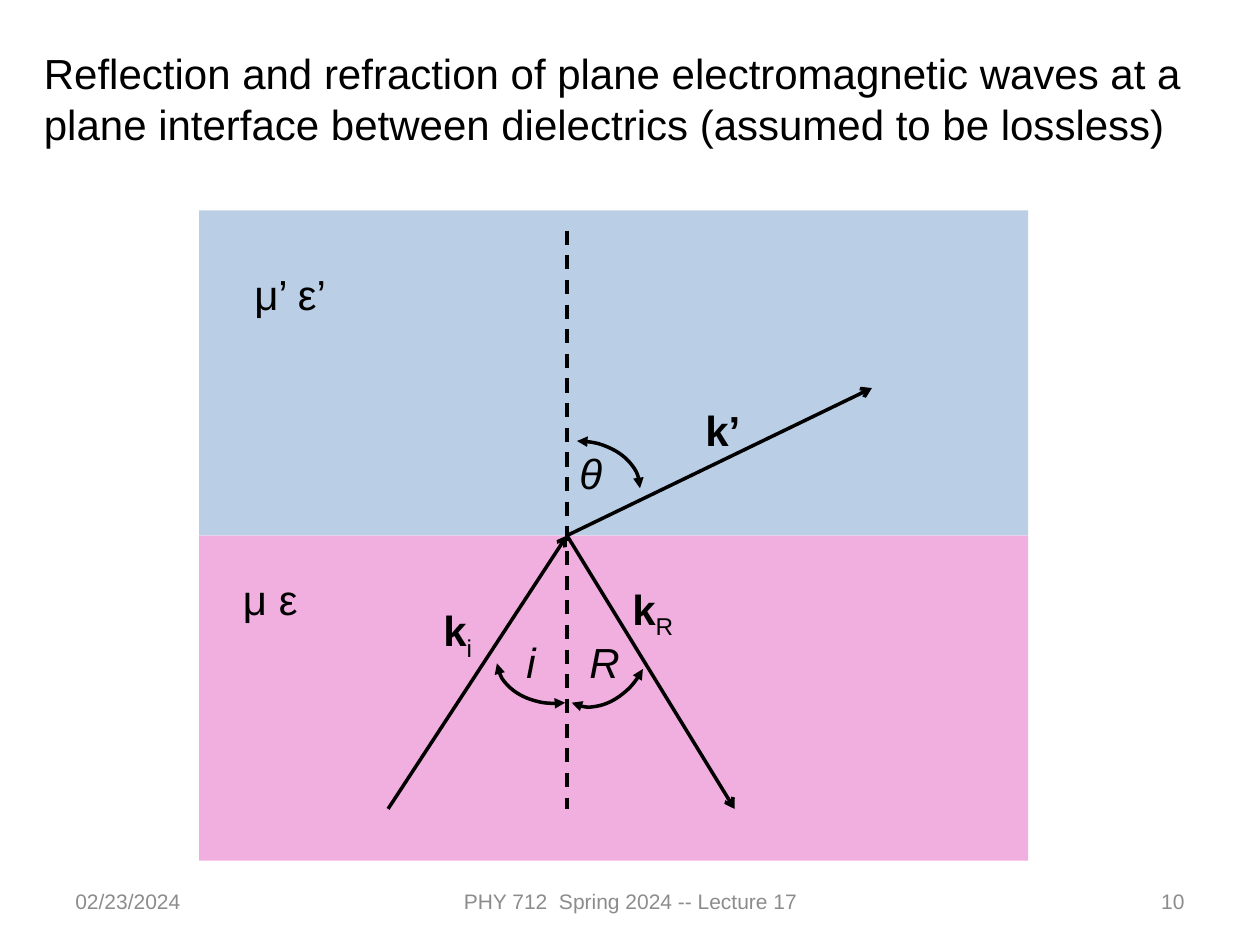
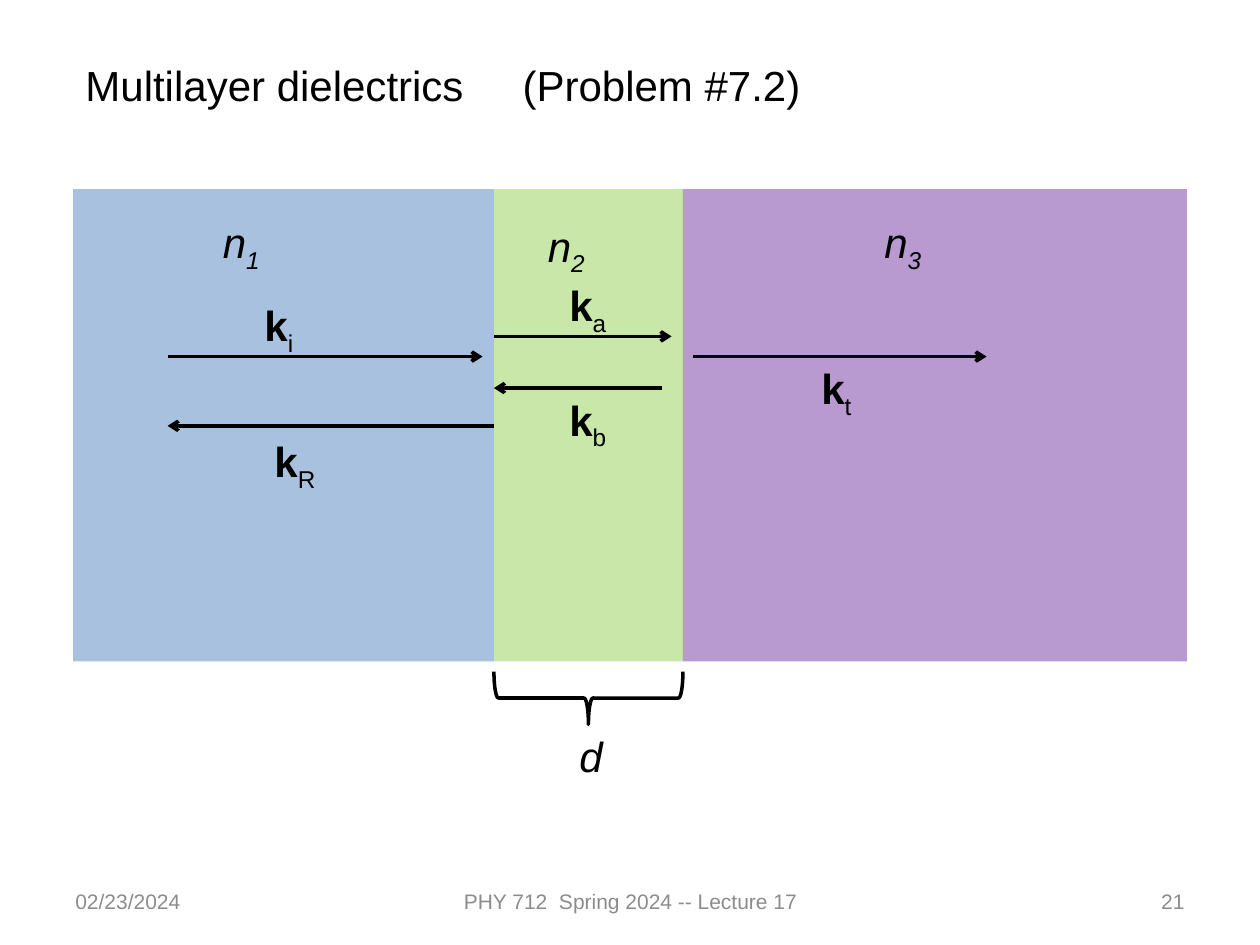
import lxml.etree
import pptx
import pptx.dml.color
import pptx.enum.dml
import pptx.enum.shapes
import pptx.enum.text
import pptx.oxml.ns
import pptx.util

Inches = pptx.util.Inches
RGBColor = pptx.dml.color.RGBColor
MSO_SHAPE = pptx.enum.shapes.MSO_SHAPE
PP_ALIGN = pptx.enum.text.PP_ALIGN
qn = pptx.oxml.ns.qn

BLACK = RGBColor(0x00, 0x00, 0x00)
GREY = RGBColor(0x8C, 0x8C, 0x8C)
BLUE = RGBColor(0x4F, 0x81, 0xBD)
PINK = RGBColor(0xDA, 0x32, 0xAA)
GREEN = RGBColor(0x92, 0xD0, 0x50)
PURPLE = RGBColor(0x70, 0x30, 0xA0)


def add_xml(parent, tag, **attrs):
    return lxml.etree.SubElement(parent, qn(tag), attrs)


def write(tf, text, sub="", size=24, color=BLACK, bold=False, italic=False,
          align=PP_ALIGN.LEFT, tab=None):
    p = tf.paragraphs[0]
    p.alignment = align
    if tab:
        tabs = add_xml(p._p.get_or_add_pPr(), "a:tabLst")
        add_xml(tabs, "a:tab", pos=str(Inches(tab)), algn="l")
    for part, lowered in ((text, False), (sub, True)):
        if not part:
            continue
        r = p.add_run()
        r.text = part
        r.font.name = "Arial"
        r.font.size = pptx.util.Pt(size)
        r.font.color.rgb = color
        r.font.bold = bold and not lowered
        r.font.italic = italic
        if lowered:
            r._r.get_or_add_rPr().set("baseline", "-25000")


class Deck:
    def __init__(self):
        self.prs = pptx.Presentation()
        self.prs.slide_width = Inches(10)
        self.prs.slide_height = Inches(7.5)
        self.s = None

    def slide(self, number):
        self.s = self.prs.slides.add_slide(self.prs.slide_layouts[6])
        for text, x, w, align in (
            ("02/23/2024", 0.5, 2.33, PP_ALIGN.LEFT),
            ("PHY 712  Spring 2024 -- Lecture 17", 3.42, 3.17, PP_ALIGN.CENTER),
            (str(number), 7.17, 2.33, PP_ALIGN.RIGHT),
        ):
            tf = self.text(text, x, 6.95, w, 0.4, size=12, color=GREY, align=align)
            tf.vertical_anchor = pptx.enum.text.MSO_ANCHOR.MIDDLE

    def text(self, text, x, y, w, h=0.5, **fmt):
        sp = self.s.shapes.add_textbox(Inches(x), Inches(y), Inches(w), Inches(h))
        tf = sp.text_frame
        tf.word_wrap = True
        write(tf, text, **fmt)
        return tf

    def vector(self, sub, x, y, w, text="k"):
        self.text(text, x, y, w, sub=sub, bold=True)

    def stroke(self, line):
        line.color.rgb = BLACK
        line.width = pptx.util.Pt(2)

    def shape(self, kind, x, y, w, h, rotation=0):
        sp = self.s.shapes.add_shape(kind, Inches(x), Inches(y), Inches(w), Inches(h))
        sp.shadow.inherit = False
        sp.rotation = rotation
        return sp

    def medium(self, color, alpha, x, y, w, h):
        sp = self.shape(MSO_SHAPE.RECTANGLE, x, y, w, h)
        sp.fill.solid()
        sp.fill.fore_color.rgb = color
        clr = sp._element.spPr.find(qn("a:solidFill")).find(qn("a:srgbClr"))
        add_xml(clr, "a:alpha", val=str(alpha * 1000))
        sp.line.fill.background()

    def outline(self, kind, x, y, w, h, rotation=0):
        sp = self.shape(kind, x, y, w, h, rotation)
        sp.fill.background()
        self.stroke(sp.line)
        return sp

    def angle(self, x, y, rotation=0):
        sp = self.outline(MSO_SHAPE.ARC, x, y, 1, 0.75, rotation)
        ln = sp.line._get_or_add_ln()
        add_xml(ln, "a:headEnd", type="triangle")
        add_xml(ln, "a:tailEnd", type="triangle")

    def line(self, start, end, dashed=False):
        c = self.s.shapes.add_connector(
            pptx.enum.shapes.MSO_CONNECTOR.STRAIGHT,
            *(Inches(v) for v in (*start, *end)))
        self.stroke(c.line)
        if dashed:
            c.line.dash_style = pptx.enum.dml.MSO_LINE.DASH
        else:
            add_xml(c.line._get_or_add_ln(), "a:tailEnd", type="arrow")
        add_xml(c._element.spPr, "a:effectLst")


def interface_slide(deck):
    deck.slide(10)
    deck.text("Reflection and refraction of plane electromagnetic waves at a "
              "plane interface between dielectrics (assumed to be lossless)",
              0.25, 0.33, 9.42, 0.91)
    for i, color in enumerate((BLUE, PINK)):
        deck.medium(color, 39, 1.58, 1.67 + i * 2.58, 6.58, 2.58)
    deck.text("μ’ ε’", 1.92, 2.08, 1.42)
    deck.text("μ ε", 1.83, 4.5, 1.42)

    origin = (4.5, 4.25)
    deck.line((3.08, 6.42), origin)
    deck.line(origin, (5.83, 6.42))
    deck.line((4.5, 1.83), (4.5, 6.42), dashed=True)
    deck.line(origin, (6.92, 3.08))

    deck.vector("", 5.5, 3.16, 0.83, text="k’")
    deck.vector("i", 3.42, 4.75, 0.83)
    deck.vector("R", 4.92, 4.58, 0.83)
    for name, x, y in (("i", 4.08, 5), ("R", 4.58, 5), ("θ", 4.5, 3.5)):
        deck.text(name, x, y, 0.42, italic=True)
    deck.angle(4.08, 3.5)
    deck.angle(3.94, 4.83, 173.1)
    deck.angle(4.27, 4.76, 117.8)


def multilayer_slide(deck):
    deck.slide(21)
    deck.text("Multilayer dielectrics\t(Problem #7.2)", 0.58, 0.42, 8.83, tab=3.47)
    for color, x, w in ((BLUE, 0.58, 3.34), (GREEN, 3.92, 1.5), (PURPLE, 5.42, 4)):
        deck.medium(color, 49, x, 1.5, w, 3.75)
    for x1, x2, y in ((1.33, 3.83, 2.83), (3.92, 5.33, 2.67), (5.25, 3.92, 3.08),
                      (5.5, 7.83, 2.83), (3.92, 1.33, 3.38)):
        deck.line((x1, y), (x2, y))
    for sub, x, y in (("1", 1.67, 1.67), ("2", 4.25, 1.7), ("3", 6.92, 1.67)):
        deck.text("n", x, y, 1.83, sub=sub, italic=True)
    for sub, x, y in (("i", 2, 2.33), ("R", 2.08, 3.41), ("t", 6.42, 2.83),
                      ("b", 4.42, 3.08), ("a", 4.42, 2.17)):
        deck.vector(sub, x, y, 0.92)
    deck.outline(MSO_SHAPE.RIGHT_BRACE, 4.46, 4.79, 0.42, 1.5, 90)
    deck.text("d", 4.5, 5.75, 0.75, italic=True)


def main():
    deck = Deck()
    interface_slide(deck)
    multilayer_slide(deck)
    deck.prs.save("out.pptx")


if __name__ == "__main__":
    main()
